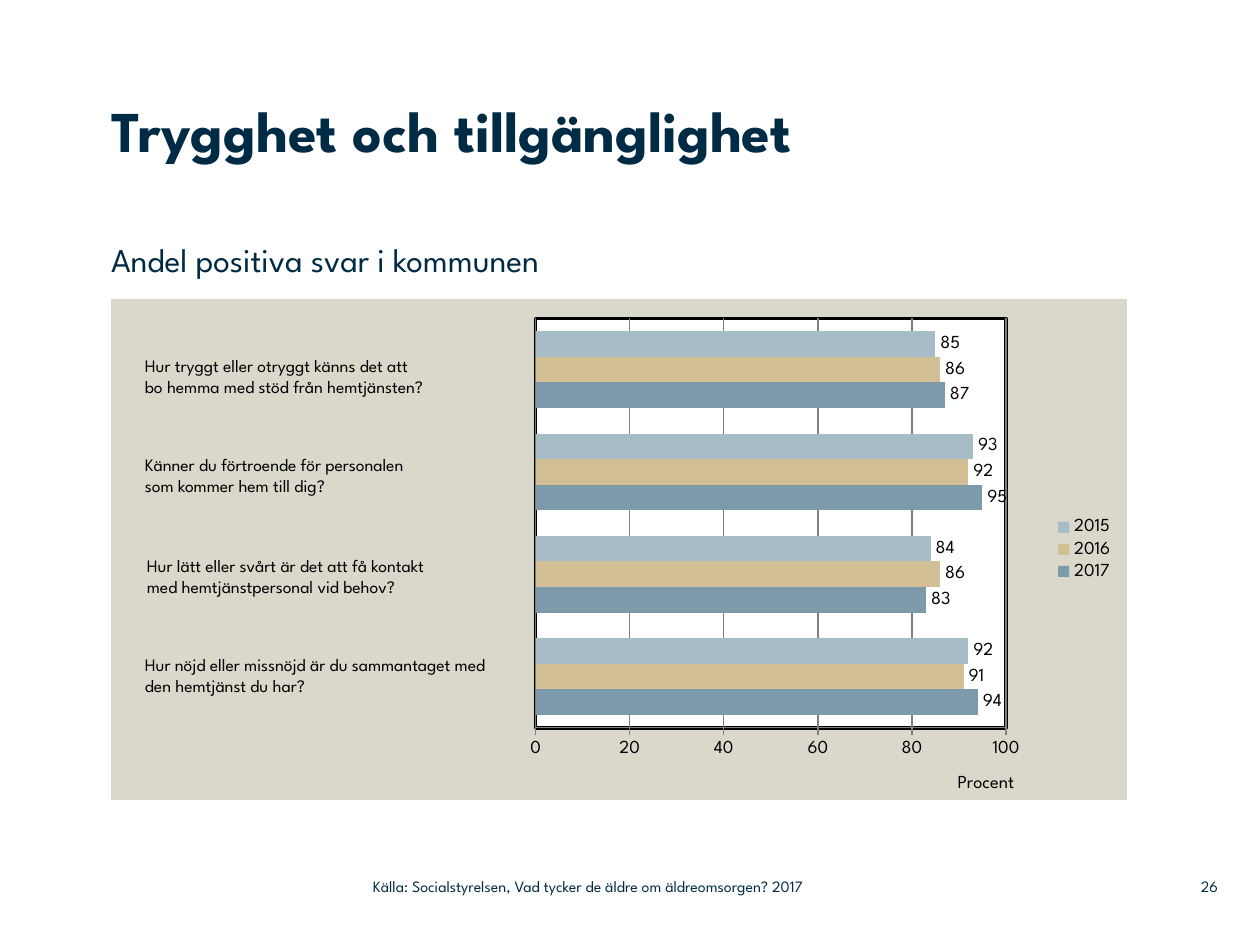
from lxml import etree
from pptx import Presentation
from pptx.chart.data import CategoryChartData
from pptx.dml.color import RGBColor
from pptx.enum.chart import XL_CHART_TYPE, XL_LABEL_POSITION, XL_LEGEND_POSITION, XL_TICK_MARK
from pptx.enum.text import MSO_ANCHOR, PP_ALIGN
from pptx.oxml import parse_xml
from pptx.oxml.ns import nsdecls, qn
from pptx.util import Pt

BAR_CLUSTERED = XL_CHART_TYPE.BAR_CLUSTERED
OUTSIDE_END = XL_LABEL_POSITION.OUTSIDE_END
LEGEND_RIGHT = XL_LEGEND_POSITION.RIGHT
TICK_OUTSIDE, TICK_NONE = XL_TICK_MARK.OUTSIDE, XL_TICK_MARK.NONE
TOP, MIDDLE = MSO_ANCHOR.TOP, MSO_ANCHOR.MIDDLE
LEFT, RIGHT = PP_ALIGN.LEFT, PP_ALIGN.RIGHT

PX_PER_INCH = 126
FONT = "League Spartan"
CHART_SIZE = 10.5
COLORS = {
    "navy": "002B45",
    "black": "000000",
    "grid": "808080",
    "panel": "DAD7CB",
    "plot": "FFFFFF",
    "2017": "7D9AAA",
    "2016": "D3BF96",
    "2015": "A6BCC6",
}
ANSWERS = {
    "2017": (94, 83, 95, 87),
    "2016": (91, 86, 92, 86),
    "2015": (92, 84, 93, 85),
}
QUESTIONS = [
    (132, 349, "Hur tryggt eller otryggt känns det att \vbo hemma med stöd från hemtjänsten?"),
    (132, 448, "Känner du förtroende för personalen\vsom kommer hem till dig?"),
    (134, 549, "Hur lätt eller svårt är det att få kontakt\vmed hemtjänstpersonal vid behov?"),
    (132, 648, "Hur nöjd eller missnöjd är du sammantaget med den hemtjänst du har?"),
]


def px(length):
    return round(length * 914400 / PX_PER_INCH)


def rgb(name):
    return RGBColor.from_string(COLORS[name])


def style_font(font, size, color="black", bold=False):
    font.name = FONT
    font.size = Pt(size)
    font.bold = bold
    font.color.rgb = rgb(color)


def add_text(slide, box, text, size, color="navy", bold=False,
             anchor=TOP, align=LEFT, inset=(0, 0)):
    frame = slide.shapes.add_textbox(*map(px, box)).text_frame
    frame.word_wrap = True
    frame.vertical_anchor = anchor
    frame.margin_left = frame.margin_right = px(inset[0])
    frame.margin_top = frame.margin_bottom = px(inset[1])
    frame.text = text
    paragraph = frame.paragraphs[0]
    paragraph.alignment = align
    for run in paragraph.runs:
        style_font(run.font, size, color, bold)


def set_layout(parent, index, settings):
    for old in parent.findall(qn("c:layout")):
        parent.remove(old)
    layout = parse_xml(f"<c:layout {nsdecls('c')}><c:manualLayout/></c:layout>")
    for tag, value in settings.items():
        etree.SubElement(layout[0], qn(f"c:{tag}")).set("val", str(value))
    parent.insert(index, layout)


def area_style(fill, line):
    return parse_xml(
        f"<c:spPr {nsdecls('c', 'a')}><a:solidFill><a:srgbClr val=\"{COLORS[fill]}\"/>"
        f"</a:solidFill>{line}</c:spPr>"
    )


def style_areas(chart):
    plot_area = chart._chartSpace.chart.plotArea
    set_layout(plot_area, 0, {
        "layoutTarget": "inner", "xMode": "edge", "yMode": "edge",
        "x": 0.418, "y": 0.039, "w": 0.463, "h": 0.817,
    })
    border = (f'<a:ln w="25400"><a:solidFill><a:srgbClr val="{COLORS["black"]}"/>'
              "</a:solidFill></a:ln>")
    plot_area.append(area_style("plot", border))
    chart._chartSpace.chart.addnext(area_style("panel", "<a:ln><a:noFill/></a:ln>"))


def style_axes(chart):
    chart.category_axis.visible = False
    axis = chart.value_axis
    axis.minimum_scale, axis.maximum_scale, axis.major_unit = 0, 100, 20
    axis.major_tick_mark, axis.minor_tick_mark = TICK_OUTSIDE, TICK_NONE
    axis.has_major_gridlines = True
    for line in (axis.major_gridlines.format.line, axis.format.line):
        line.color.rgb = rgb("grid")
        line.width = Pt(0.75)
    style_font(axis.tick_labels.font, CHART_SIZE)
    title = axis.axis_title
    title.text_frame.text = "Procent"
    style_font(title.text_frame.paragraphs[0].runs[0].font, CHART_SIZE)
    set_layout(title._element, 1, {"xMode": "edge", "yMode": "edge", "x": 0.83, "y": 0.94})


def style_series(chart):
    plot = chart.plots[0]
    plot.gap_width = 100
    plot.overlap = 0
    plot.vary_by_categories = False
    for series in plot.series:
        series.format.fill.solid()
        series.format.fill.fore_color.rgb = rgb(series.name)
        labels = series.data_labels
        labels.show_value = True
        labels.position = OUTSIDE_END
        style_font(labels.font, CHART_SIZE)


def add_answer_chart(slide, box):
    data = CategoryChartData()
    data.categories = ["1", "2", "3", "4"]
    for year, shares in ANSWERS.items():
        data.add_series(year, shares)
    chart = slide.shapes.add_chart(BAR_CLUSTERED, *map(px, box), data).chart
    chart.has_title = False
    style_font(chart.font, 10)
    chart.has_legend = True
    chart.legend.position = LEGEND_RIGHT
    chart.legend.include_in_layout = False
    style_font(chart.legend.font, CHART_SIZE)
    style_areas(chart)
    style_axes(chart)
    style_series(chart)


def main():
    deck = Presentation()
    deck.slide_width, deck.slide_height = px(1260), px(945)
    slide = deck.slides.add_slide(deck.slide_layouts[6])
    add_text(slide, (111, 95, 1053, 179), "Trygghet och tillgänglighet", 33, bold=True)
    add_text(slide, (111, 239, 873, 57), "Andel positiva svar i kommunen", 19)
    add_answer_chart(slide, (111, 299, 1016, 501))
    for left, top, question in QUESTIONS:
        add_text(slide, (left, top, 376, 55), question, 10, "black", inset=(13, 6))
    add_text(slide, (1159, 868, 59, 37), "26", 9, anchor=MIDDLE, align=RIGHT)
    add_text(slide, (373, 868, 558, 37),
             "Källa: Socialstyrelsen, Vad tycker de äldre om äldreomsorgen? 2017",
             9, anchor=MIDDLE)
    deck.save("out.pptx")


if __name__ == "__main__":
    main()
